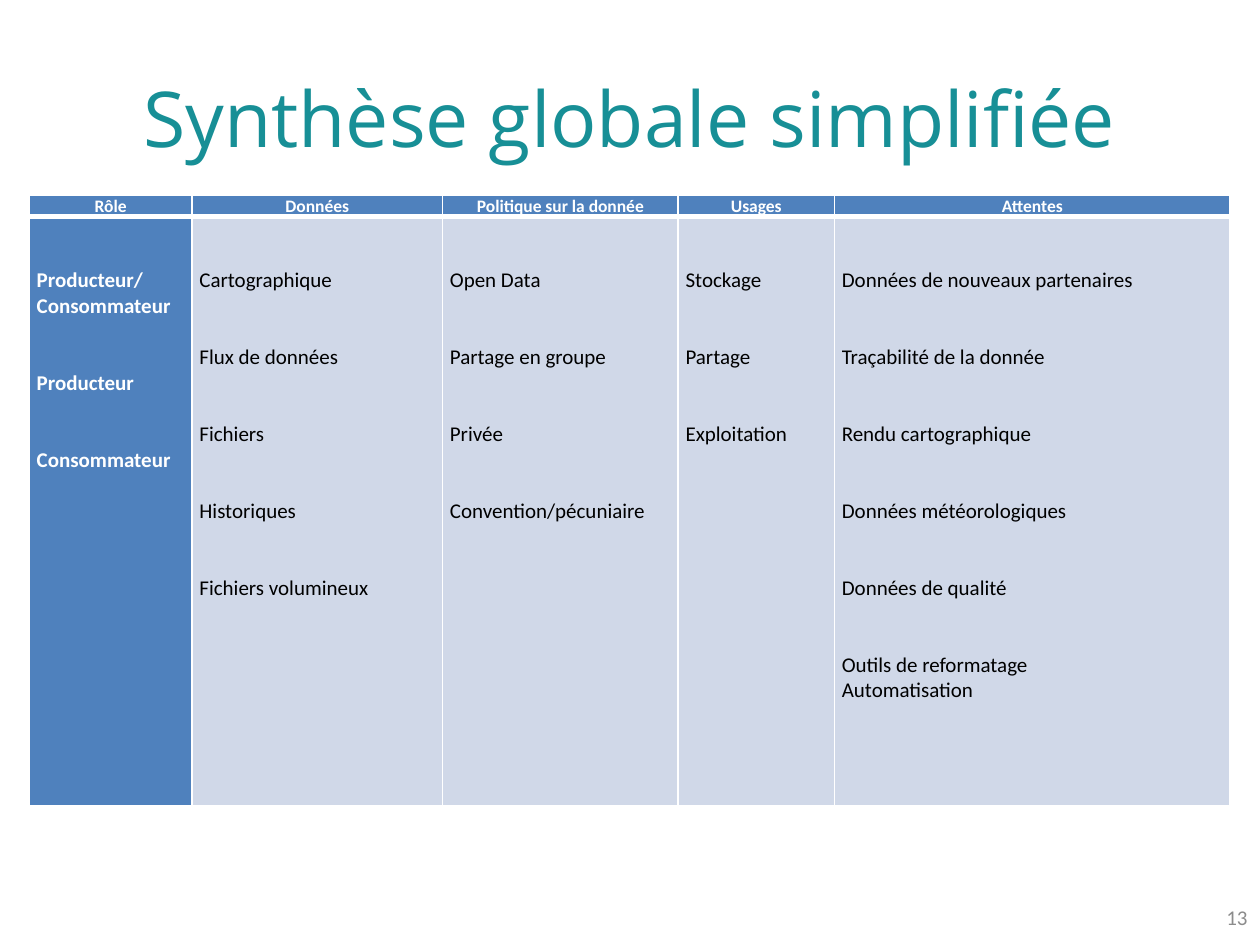
from lxml.etree import SubElement
from pptx import Presentation
from pptx.dml.color import RGBColor
from pptx.enum.text import MSO_ANCHOR as Anchor, PP_ALIGN as Align
from pptx.oxml.ns import qn
from pptx.util import Cm, Pt

BLUE, PALE, WHITE, BLACK = "4F81BD", "D0D8E8", "FFFFFF", "000000"
GAP = Pt(29.3)  # two lines of 12 pt text

# head, width in cm, entries (a line break starts a new paragraph without gap)
COLS = [
    ("Rôle", 3.28, ["Producteur/\nConsommateur", "Producteur", "Consommateur"]),
    ("Données", 5.05, ["Cartographique", "Flux de données", "Fichiers",
                       "Historiques", "Fichiers volumineux"]),
    ("Politique sur la donnée", 4.75, ["Open Data", "Partage en groupe", "Privée",
                                       "Convention/pécuniaire"]),
    ("Usages", 3.15, ["Stockage", "Partage", "Exploitation"]),
    ("Attentes", 7.98, ["Données de nouveaux partenaires", "Traçabilité de la donnée",
                        "Rendu cartographique", "Données météorologiques",
                        "Données de qualité",
                        "Outils de reformatage\nAutomatisation"]),
]


def color(code):
    return RGBColor.from_string(code)


def write(para, text, size, code, align, font="Calibri", bold=False):
    para.alignment = align
    run = para.add_run()
    run.text = text
    run.font.name, run.font.size, run.font.bold = font, Pt(size), bold
    run.font.color.rgb = color(code)


def place(shape, box):
    shape.left, shape.top, shape.width, shape.height = map(Cm, box)


def style(cell, fill, top, bottom):
    """Set margins, white borders (widths in points) and fill."""
    cell.margin_left = cell.margin_right = Cm(0.15)
    cell.margin_top = cell.margin_bottom = 0
    props = cell._tc.get_or_add_tcPr()
    for side, width in zip("LRTB", (1, 1, top, bottom)):
        line = SubElement(props, qn(f"a:ln{side}"), w=str(Pt(width)))
        paint = SubElement(line, qn("a:solidFill"))
        SubElement(paint, qn("a:srgbClr"), val=WHITE)
    cell.fill.solid()
    cell.fill.fore_color.rgb = color(fill)


def add_title(slide, box):
    title = slide.shapes.title
    place(title, box)
    title.text_frame.vertical_anchor = Anchor.MIDDLE
    write(title.text_frame.paragraphs[0], "Synthèse globale simplifiée",
          44, "178F96", Align.CENTER, "Open Sans")


def fill_body(cell, items, code, bold):
    cell.margin_top = GAP
    frame = cell.text_frame
    for i, item in enumerate(items):
        for j, text in enumerate(item.split("\n")):
            first = i == j == 0
            para = frame.paragraphs[0] if first else frame.add_paragraph()
            if i and not j:
                para.space_before = GAP
            write(para, text, 12, code, Align.JUSTIFY, bold=bold)


def add_grid(slide, box):
    grid = slide.shapes.add_table(2, len(COLS), *map(Cm, box)).table
    head = Cm(0.41)
    grid.rows[0].height, grid.rows[1].height = head, Cm(box[3]) - head
    for i, (name, width, items) in enumerate(COLS):
        grid.columns[i].width = Cm(width)
        top, body = grid.cell(0, i), grid.cell(1, i)
        style(top, BLUE, 1, 3)
        write(top.text_frame.paragraphs[0], name, 10, WHITE, Align.CENTER, bold=True)
        style(body, PALE if i else BLUE, 3, 1)
        fill_body(body, items, BLACK if i else WHITE, bold=not i)


def add_number(slide, box):
    frame = slide.shapes.add_textbox(*map(Cm, box)).text_frame
    frame.word_wrap = True
    frame.vertical_anchor = Anchor.MIDDLE
    write(frame.paragraphs[0], "13", 12, "8C8C8C", Align.RIGHT)


def main():
    deck = Presentation()
    deck.slide_width, deck.slide_height = Cm(25.4), Cm(19.05)
    slide = deck.slides.add_slide(deck.slide_layouts[5])
    add_title(slide, (1.27, 0.76, 22.86, 3.18))
    add_grid(slide, (0.59, 3.94, 24.21, 12.29))
    add_number(slide, (19.69, 17.98, 5.71, 1.02))
    deck.save("out.pptx")


if __name__ == "__main__":
    main()
